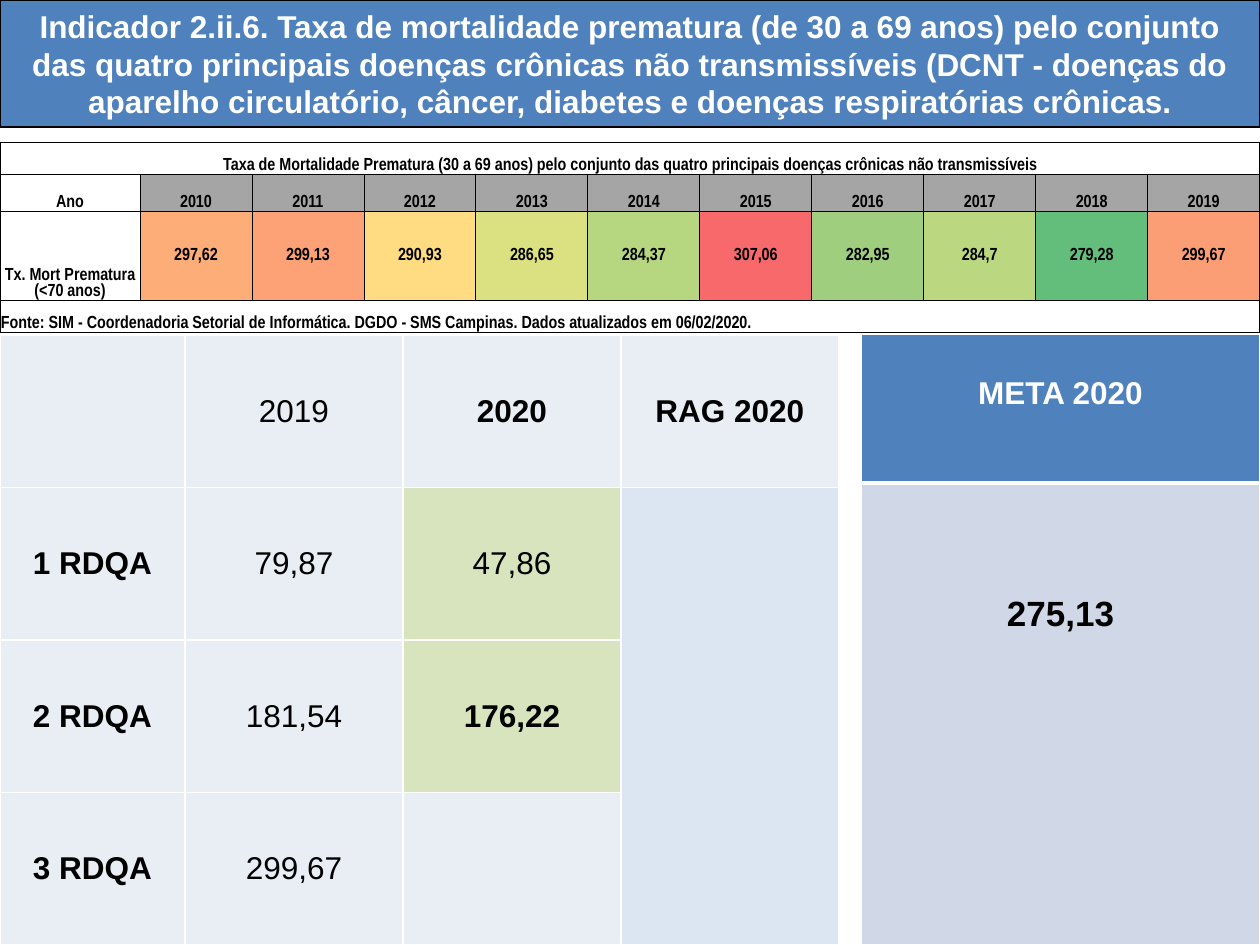
from lxml.etree import SubElement
from pptx import Presentation
from pptx.dml.color import RGBColor
from pptx.enum.text import MSO_ANCHOR as ANCHOR, MSO_AUTO_SIZE as AUTO, PP_ALIGN as ALIGN
from pptx.oxml.ns import qn
from pptx.util import Emu, Pt

C = {
    "blue": "4F81BD", "white": "FFFFFF", "black": "000000", "grey": "A5A5A5",
    "pale": "E9EDF4", "green": "D7E4BD", "sky": "DCE6F2", "lilac": "D0D8E8",
}
TITLE = ("Indicador 2.ii.6. Taxa de mortalidade prematura (de 30 a 69 anos) pelo conjunto "
         "das quatro principais doenças crônicas não transmissíveis (DCNT - doenças do "
         "aparelho circulatório, câncer, diabetes e doenças respiratórias crônicas.")
RATES_HEADING = ("Taxa de Mortalidade Prematura (30 a 69 anos) pelo conjunto das quatro "
                 "principais doenças crônicas não transmissíveis")
RATES_SOURCE = ("Fonte: SIM - Coordenadoria Setorial de Informática. DGDO - SMS Campinas. "
                "Dados atualizados em 06/02/2020.")
RATES = [  # year, rate, heat colour
    ("2010", "297,62", "FCAD78"), ("2011", "299,13", "FCA276"),
    ("2012", "290,93", "FFDC82"), ("2013", "286,65", "DBE081"),
    ("2014", "284,37", "B6D67F"), ("2015", "307,06", "F8696B"),
    ("2016", "282,95", "9FCF7E"), ("2017", "284,7", "BBD780"),
    ("2018", "279,28", "63BE7B"), ("2019", "299,67", "FB9E76"),
]
QUARTERS = [
    ["", "2019", "2020", "RAG 2020"],
    ["1 RDQA", "79,87", "47,86", ""],
    ["2 RDQA", "181,54", "176,22", ""],
    ["3 RDQA", "299,67", "", ""],
]
PLAIN = {"2019", "79,87", "47,86", "181,54", "299,67"}


def px(n):
    return Emu(round(n * 914400 / 126))


def rgb(value):
    return RGBColor.from_string(value)


def style_text(p, size, color, bold=True, font="Arial", align=ALIGN.CENTER):
    p.alignment = align
    f = p.font
    f.name, f.size, f.bold = font, Pt(size), bold
    f.color.rgb = rgb(color)


def add_title(slide):
    sp = slide.shapes.title
    sp.left, sp.top, sp.width, sp.height = px(0), px(0), px(1260), px(127)
    sp.fill.solid()
    sp.fill.fore_color.rgb = rgb(C["blue"])
    sp.line.color.rgb = rgb(C["black"])
    sp.line.width = Pt(0.75)
    tf = sp.text_frame
    tf.text = TITLE
    tf.word_wrap, tf.auto_size = True, AUTO.NONE
    tf.vertical_anchor = ANCHOR.MIDDLE
    style_text(tf.paragraphs[0], 18, C["white"])


def add_table(slide, left, top, cols, rows):
    frame = slide.shapes.add_table(len(rows), len(cols), px(left), px(top),
                                   px(sum(cols)), px(sum(rows)))
    table = frame.table
    table.first_row = table.horz_banding = False
    for col, width in zip(table.columns, cols):
        col.width = px(width)
    for row, height in zip(table.rows, rows):
        row.height = px(height)
    return table


def set_borders(cell, color, left, right, top, bottom):
    """Draw the four cell edges; widths are in points."""
    tc_pr = cell._tc.get_or_add_tcPr()
    for i, (side, width) in enumerate(zip("LRTB", (left, right, top, bottom))):
        ln = SubElement(tc_pr, qn(f"a:ln{side}"), w=str(Pt(width)))
        SubElement(SubElement(ln, qn("a:solidFill")), qn("a:srgbClr"), val=color)
        tc_pr.insert(i, ln)


def set_cell(cell, text, fill, edges, edge_color, margins=(0, 0, 0, 0),
             anchor=ANCHOR.MIDDLE, size=18, color=C["black"], **text_style):
    """Fill in one cell; margins are left, right, top, bottom in px."""
    cell.text = text
    cell.vertical_anchor = anchor
    (cell.margin_left, cell.margin_right,
     cell.margin_top, cell.margin_bottom) = map(px, margins)
    style_text(cell.text_frame.paragraphs[0], size, color, **text_style)
    set_borders(cell, edge_color, *edges)
    if fill:
        cell.fill.solid()
        cell.fill.fore_color.rgb = rgb(fill)
    else:
        cell.fill.background()


def add_quarters_table(slide):
    table = add_table(slide, 0, 335, [185] + [218] * 3, [152.5] * 4)
    for r, row in enumerate(QUARTERS):
        for c, text in enumerate(row):
            fill = C["pale"]
            if r and c == 3:
                fill = C["sky"]
            elif r in (1, 2) and c == 2:
                fill = C["green"]
            set_cell(table.cell(r, c), text, fill, [1] * 4, C["white"],
                     bold=text not in PLAIN)
    table.cell(1, 3).merge(table.cell(3, 3))


def add_target_table(slide):
    table = add_table(slide, 861, 334, [399], [149, 462])
    set_cell(table.cell(0, 0), "META 2020", C["blue"], (1, 1, 1, 3), C["white"],
             (13, 13, 42, 6), ANCHOR.TOP, color=C["white"])
    set_cell(table.cell(1, 0), "275,13", C["lilac"], (1, 1, 3, 1), C["white"],
             (13, 13, 112, 6), ANCHOR.TOP, size=20)


def add_rates_table(slide):
    years, rates, heat = zip(*RATES)
    blank = [""] * len(RATES)
    no_fill = [None] * (len(RATES) + 1)
    rows = [
        ([RATES_HEADING, *blank], no_fill),
        (["Ano", *years], [None] + [C["grey"]] * len(years)),
        (["Tx. Mort Prematura (<70 anos)", *rates], [None, *heat]),
        ([RATES_SOURCE, *blank], no_fill),
    ]
    table = add_table(slide, 0, 142, [140] + [112] * len(RATES), [32, 37, 89, 32])
    for r, (texts, fills) in enumerate(rows):
        for c, (text, fill) in enumerate(zip(texts, fills)):
            set_cell(table.cell(r, c), text, fill, [0.5] * 4, C["black"], (1, 1, 1, 0),
                     ANCHOR.MIDDLE if r == 2 and c else ANCHOR.BOTTOM, size=10,
                     font="Arial Narrow", align=ALIGN.LEFT if r == 3 else ALIGN.CENTER)
    for r in (0, 3):
        table.cell(r, 0).merge(table.cell(r, len(RATES)))


def main():
    prs = Presentation()
    prs.slide_width, prs.slide_height = px(1260), px(945)
    slide = prs.slides.add_slide(prs.slide_layouts[5])
    add_title(slide)
    add_quarters_table(slide)
    add_target_table(slide)
    add_rates_table(slide)
    prs.save("out.pptx")


if __name__ == "__main__":
    main()
